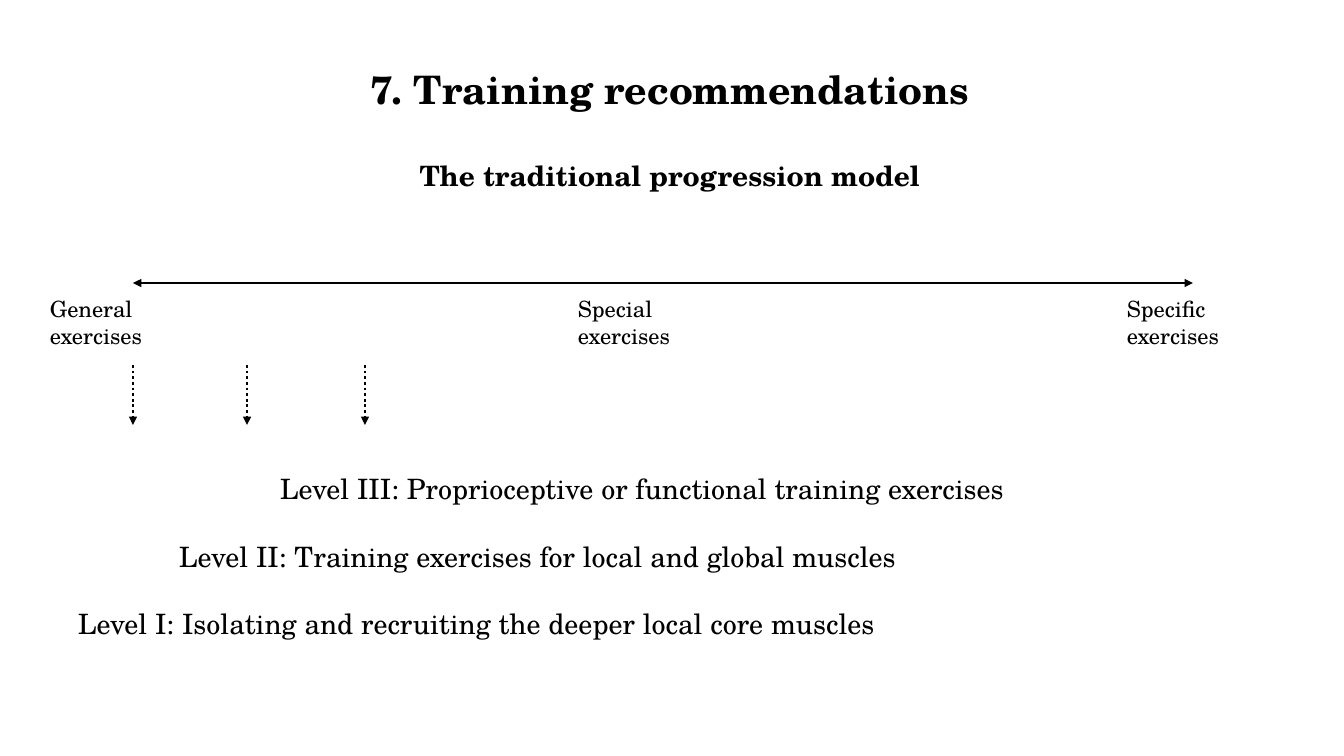
"""Build the training progression slide."""
from dataclasses import dataclass

from lxml.etree import SubElement
from pptx import Presentation
from pptx.dml.color import RGBColor
from pptx.enum.dml import MSO_LINE
from pptx.enum.shapes import MSO_CONNECTOR
from pptx.enum.text import PP_ALIGN
from pptx.oxml.ns import qn
from pptx.util import Pt

TITLE = "7. Training recommendations"
MODEL = "The traditional progression model"
LABELS = [
    ("General exercises", 40),
    ("Special exercises", 568),
    ("Specific exercises", 1117),
]
LEVELS = [
    "Level III: Proprioceptive or functional training exercises",
    "Level II: Training exercises for local and global muscles",
    "Level I: Isolating and recruiting the deeper local core muscles",
]
ARROWS = [133, 247, 365]
AXIS = (133, 283, 1193, 283)


@dataclass(frozen=True)
class Theme:
    font: str = "TeX Gyre Schola"
    ink: RGBColor = RGBColor(0, 0, 0)
    paper: RGBColor = RGBColor(255, 255, 255)
    title: int = 28
    body: int = 20
    label: int = 16
    line: int = 2


THEME = Theme()


def px(n):
    return round(n * 9144000 / 1008)


def add_box(slide, left, top, width, height):
    frame = slide.shapes.add_textbox(px(left), px(top), px(width), px(height)).text_frame
    frame.word_wrap = True
    return frame


def add_text(frame, text, size=THEME.body, bold=False, align=PP_ALIGN.LEFT, gap=0, indent=0):
    first = frame.paragraphs[0]
    para = first if not first.runs else frame.add_paragraph()
    para.alignment = align
    para.space_before = Pt(gap)
    if indent:
        props = para._p.get_or_add_pPr()
        props.set("marL", str(px(indent)))
        props.set("indent", "0")
    run = para.add_run()
    run.text = text
    run.font.name = THEME.font
    run.font.size = Pt(size)
    run.font.bold = bold
    run.font.color.rgb = THEME.ink


def add_line(slide, ends, tips, dash=None):
    line = slide.shapes.add_connector(MSO_CONNECTOR.STRAIGHT, *map(px, ends))
    line.line.color.rgb = THEME.ink
    line.line.width = Pt(THEME.line)
    if dash:
        line.line.dash_style = dash
    for tip in tips:
        SubElement(line.get_or_add_ln(), qn(tip)).set("type", "triangle")
    SubElement(line._element.spPr, qn("a:effectLst"))


def main():
    deck = Presentation()
    deck.slide_width, deck.slide_height = px(1344), px(756)
    slide = deck.slides.add_slide(deck.slide_layouts[6])
    slide.background.fill.solid()
    slide.background.fill.fore_color.rgb = THEME.paper

    head = add_box(slide, 358, 60, 624, 139)
    add_text(head, TITLE, size=THEME.title, bold=True, align=PP_ALIGN.CENTER)
    add_text(head, MODEL, bold=True, align=PP_ALIGN.CENTER, gap=33)

    add_line(slide, AXIS, ("a:headEnd", "a:tailEnd"))
    for text, left in LABELS:
        add_text(add_box(slide, left, 290, 185, 64), text, size=THEME.label)
    for x in ARROWS:
        add_line(slide, (x, 365, x, 425), ("a:tailEnd",), dash=MSO_LINE.ROUND_DOT)

    steps = add_box(slide, 68, 467, 1197, 179)
    for i, text in enumerate(LEVELS):
        depth = len(LEVELS) - 1 - i
        add_text(steps, text, gap=24 if i else 0, indent=101 * depth)

    deck.save("out.pptx")


if __name__ == "__main__":
    main()
